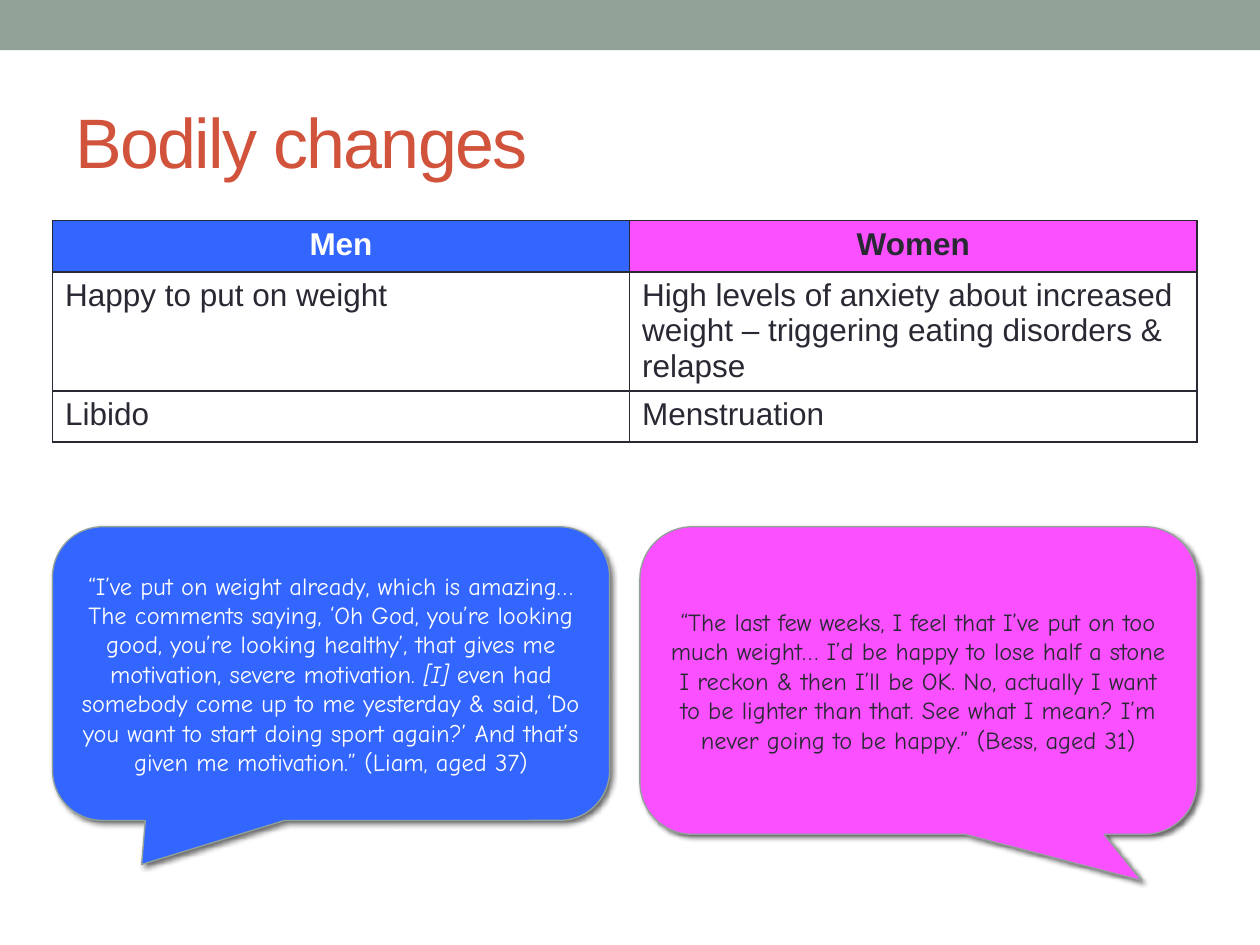
"""Build the "Bodily changes" slide: a comparison table above two quotations."""
from dataclasses import dataclass

from lxml.etree import SubElement
from pptx import Presentation
from pptx.dml.color import RGBColor as Color
from pptx.enum.shapes import MSO_SHAPE as Shape
from pptx.enum.text import MSO_ANCHOR as Anchor, PP_ALIGN as Align
from pptx.oxml.ns import qn
from pptx.util import Cm, Pt

TITLE = "Bodily changes"
ROWS = [
    ("Men", "Women"),
    ("Happy to put on weight",
     "High levels of anxiety about increased weight – triggering eating disorders & relapse"),
    ("Libido", "Menstruation"),
]
WOMAN_QUOTE = [
    ("“The last few weeks, I feel that I’ve put on too much weight… I’d be happy to lose "
     "half a stone I reckon & then I’ll be OK. No, actually I want to be lighter than that. "
     "See what I mean? I’m never going to be happy.” (Bess, aged 31)", False),
]
MAN_QUOTE = [
    ("“I’ve put on weight already, which is amazing… The comments saying, ‘Oh God, you’re "
     "looking good, you’re looking healthy’, that gives me motivation, severe motivation. ", False),
    ("[I] ", True),
    ("even had somebody come up to me yesterday & said, ‘Do you want to start doing sport "
     "again?’ And that’s given me motivation.” (Liam, aged 37)", False),
]


@dataclass(frozen=True)
class Theme:
    band: str = "93A299"
    title: str = "D2533C"
    dark: str = "292934"
    light: str = "FFFFFF"
    men: str = "3366FF"
    women: str = "FA50FF"
    font: str = "Arial"
    quote_font: str = "Comic Neue"
    title_size: int = 40
    table_size: int = 18
    quote_size: int = 14


THEME = Theme()
HEADER_COLORS = [(THEME.men, THEME.light), (THEME.women, THEME.dark)]
LEFT, RIGHT = 1.06, 24.13
TABLE_TOP = 4.45
COLUMN_WIDTHS = (11.63, 11.44)
ROW_HEIGHTS = (1.03, 2.4, 1.03)
QUOTE_TOP, QUOTE_WIDTH = 10.62, 11.23
QUOTES = [
    (WOMAN_QUOTE, RIGHT - QUOTE_WIDTH, 6.2, (0.4, 0.65, 0.17), HEADER_COLORS[1]),
    (MAN_QUOTE, LEFT, 5.92, (-0.34, 0.65, 0.17), HEADER_COLORS[0]),
]


def set_font(paragraph, name, size, color, bold=False):
    font = paragraph.font
    font.name, font.size, font.bold = name, Pt(size), bold
    font.color.rgb = Color.from_string(color)


def set_fill(target, color):
    target.fill.solid()
    target.fill.fore_color.rgb = Color.from_string(color)


def add_color(parent, color):
    fill = SubElement(parent, qn("a:solidFill"))
    return SubElement(fill, qn("a:srgbClr"), val=color)


def add_band(slide, width):
    band = slide.shapes.add_shape(Shape.RECTANGLE, 0, 0, width, Cm(1.01))
    band.shadow.inherit = False
    set_fill(band, THEME.band)
    band.line.fill.background()


def format_title(title):
    title.left, title.top, title.width, title.height = Cm(1.27), Cm(1.47), Cm(22.86), Cm(2.74)
    frame = title.text_frame
    frame.text = TITLE
    frame.vertical_anchor = Anchor.MIDDLE
    paragraph = frame.paragraphs[0]
    paragraph.alignment = Align.LEFT
    set_font(paragraph, THEME.font, THEME.title_size, THEME.title)
    paragraph.runs[0].font._element.set("spc", "-100")


def add_borders(cell):
    properties = cell._tc.get_or_add_tcPr()
    for side in ("lnL", "lnR", "lnT", "lnB"):
        add_color(SubElement(properties, qn(f"a:{side}"), w=str(Pt(1))), THEME.dark)


def add_comparison(slide):
    frame = slide.shapes.add_table(
        len(ROWS), len(COLUMN_WIDTHS), Cm(LEFT), Cm(TABLE_TOP),
        Cm(sum(COLUMN_WIDTHS)), Cm(sum(ROW_HEIGHTS)))
    table = frame.table
    for column, width in zip(table.columns, COLUMN_WIDTHS):
        column.width = Cm(width)
    for row, height in zip(table.rows, ROW_HEIGHTS):
        row.height = Cm(height)
    for row_index, texts in enumerate(ROWS):
        is_header = row_index == 0
        for column_index, text in enumerate(texts):
            cell = table.cell(row_index, column_index)
            fill, header_color = HEADER_COLORS[column_index]
            cell.text = text
            add_borders(cell)
            paragraph = cell.text_frame.paragraphs[0]
            if is_header:
                set_fill(cell, fill)
                paragraph.alignment = Align.CENTER
            else:
                cell.fill.background()
            set_font(paragraph, THEME.font, THEME.table_size,
                     header_color if is_header else THEME.dark, is_header)


def add_shadow(shape):
    shape.shadow.inherit = False
    effects = shape._element.spPr.find(qn("a:effectLst"))
    shadow = SubElement(effects, qn("a:outerShdw"), blurRad=str(Pt(3)), dist=str(Pt(2)),
                        dir=str(45 * 60000), rotWithShape="0")
    SubElement(SubElement(shadow, qn("a:srgbClr"), val="000000"), qn("a:alpha"), val="60000")


def add_quote(slide, runs, left, height, adjustments, colors):
    fill, text_color = colors
    callout = slide.shapes.add_shape(
        Shape.ROUNDED_RECTANGULAR_CALLOUT, Cm(left), Cm(QUOTE_TOP), Cm(QUOTE_WIDTH), Cm(height))
    for index, value in enumerate(adjustments):
        callout.adjustments[index] = value
    set_fill(callout, fill)
    callout.line.color.rgb = Color.from_string(THEME.band)
    callout.line.width = Pt(0.75)
    add_shadow(callout)
    frame = callout.text_frame
    frame.word_wrap = True
    frame.vertical_anchor = Anchor.MIDDLE
    paragraph = frame.paragraphs[0]
    paragraph.alignment = Align.CENTER
    set_font(paragraph, THEME.quote_font, THEME.quote_size, text_color)
    for text, italic in runs:
        run = paragraph.add_run()
        run.text = text
        run.font.italic = italic


def main():
    presentation = Presentation()
    presentation.slide_width, presentation.slide_height = Cm(25.4), Cm(19.05)
    slide = presentation.slides.add_slide(presentation.slide_layouts[5])
    add_band(slide, presentation.slide_width)
    format_title(slide.shapes.title)
    add_comparison(slide)
    for quote in QUOTES:
        add_quote(slide, *quote)
    presentation.save("out.pptx")


if __name__ == "__main__":
    main()
